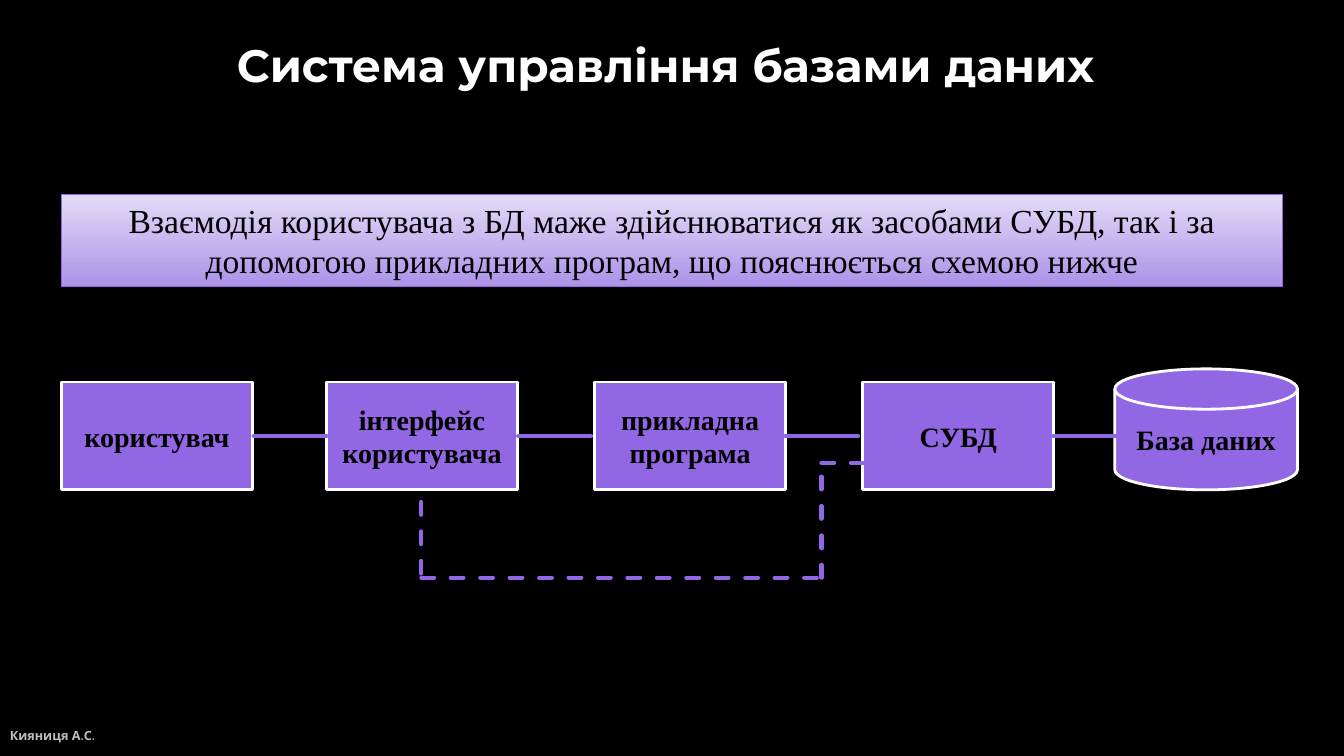
from lxml.etree import SubElement
from pptx import Presentation
from pptx.dml.color import RGBColor
from pptx.enum.dml import MSO_LINE
from pptx.enum.shapes import MSO_CONNECTOR, MSO_SHAPE
from pptx.enum.text import MSO_ANCHOR, PP_ALIGN
from pptx.oxml.ns import qn
from pptx.util import Pt

COLORS = {
    "background": "000000",
    "white": "FFFFFF",
    "black": "000000",
    "violet": "9167E3",
    "pale": "E2DBF7",
    "lilac": "AC93E8",
    "gray": "BFBFBF",
}

# Font formats
TITLE = {"name": "Montserrat", "size": Pt(32.4), "bold": True}
BODY = {"name": "Times New Roman", "size": Pt(24), "bold": False}
LABEL = {"name": "Times New Roman", "size": Pt(20), "bold": True}
FOOTER = {"name": "Quicksand", "size": Pt(9), "bold": True}

# Rows of the scheme: box lefts and labels
BOX_TOP, BOX_W, BOX_H = 272.9, 136.4, 77
BOXES = [
    (43.9, "користувач"),
    (233.3, "інтерфейс\nкористувача"),
    (424.8, "прикладна\nпрограма"),
    (616.3, "СУБД"),
]
LINK_STARTS = [181.2, 370.1, 560.9, 752.4]
LINK_Y, LINK_W = 311.3, 52

# Dashed way round the application program
BYPASS = [(301, 358.6), (301, 412.6), (586.8, 412.6), (586.8, 330.5), (617, 330.5)]


def rgb(name):
    return RGBColor.from_string(COLORS[name])


def write(shape, text, font, color, align=PP_ALIGN.CENTER, anchor=MSO_ANCHOR.MIDDLE):
    tf = shape.text_frame
    for key, value in {"word_wrap": True, "vertical_anchor": anchor}.items():
        setattr(tf, key, value)
    for i, line in enumerate(text.split("\n")):
        p = tf.add_paragraph() if i else tf.paragraphs[0]
        p.alignment = align
        r = p.add_run()
        r.text = line
        for key, value in font.items():
            setattr(r.font, key, value)
        r.font.color.rgb = rgb(color)


def add_text(s, box, text, font, color, align):
    write(s.shapes.add_textbox(*map(Pt, box)), text, font, color, align)


def add_block(s, kind, box, line_color, line_width):
    sp = s.shapes.add_shape(kind, *map(Pt, box))
    sp.shadow.inherit = False
    sp.line.color.rgb = rgb(line_color)
    sp.line.width = Pt(line_width)
    return sp


def add_node(s, kind, box, text):
    sp = add_block(s, kind, box, "white", 2)
    sp.fill.solid()
    sp.fill.fore_color.rgb = rgb("violet")
    write(sp, text, LABEL, "black")


def add_banner(s, box, text):
    sp = add_block(s, MSO_SHAPE.RECTANGLE, box, "violet", 0.75)
    sp.fill.gradient()
    sp.fill.gradient_angle = 270
    for stop, color in zip(sp.fill.gradient_stops, ("pale", "lilac")):
        stop.color.rgb = rgb(color)
    write(sp, text, BODY, "black", anchor=MSO_ANCHOR.TOP)


def add_link(s, start, end, dash=None):
    c = s.shapes.add_connector(MSO_CONNECTOR.STRAIGHT, *map(Pt, start + end))
    c.line.color.rgb = rgb("violet")
    for key, value in {"width": Pt(3), "dash_style": dash}.items():
        setattr(c.line, key, value)
    props = c._element.spPr
    props.find(qn("a:ln")).set("cap", "rnd")
    SubElement(props, qn("a:effectLst"))


def main():
    prs = Presentation()
    prs.slide_width, prs.slide_height = Pt(960), Pt(540)
    s = prs.slides.add_slide(prs.slide_layouts[6])
    s.background.fill.solid()
    s.background.fill.fore_color.rgb = rgb("background")

    # Title and statement
    add_text(s, (90, 20.9, 780, 50.4), "Система управління базами даних ",
             TITLE, "white", PP_ALIGN.CENTER)
    add_banner(s, (43.9, 139, 872, 65.5),
               "Взаємодія користувача з БД маже здійснюватися як засобами СУБД, "
               "так і за допомогою прикладних програм, що пояснюється схемою нижче")

    # Nodes
    for left, text in BOXES:
        add_node(s, MSO_SHAPE.RECTANGLE, (left, BOX_TOP, BOX_W, BOX_H), text)
    add_node(s, MSO_SHAPE.FLOWCHART_MAGNETIC_DISK, (796.3, 263.5, 130.5, 86.4),
             "База даних")

    # Links
    for x in LINK_STARTS:
        add_link(s, (x, LINK_Y), (x + LINK_W, LINK_Y))
    for start, end in zip(BYPASS, BYPASS[1:]):
        add_link(s, start, end, MSO_LINE.DASH)

    # Footer
    add_text(s, (0, 511.2, 594, 28.8), "Кияниця А.С.", FOOTER, "gray", PP_ALIGN.LEFT)

    prs.save("out.pptx")


if __name__ == "__main__":
    main()
